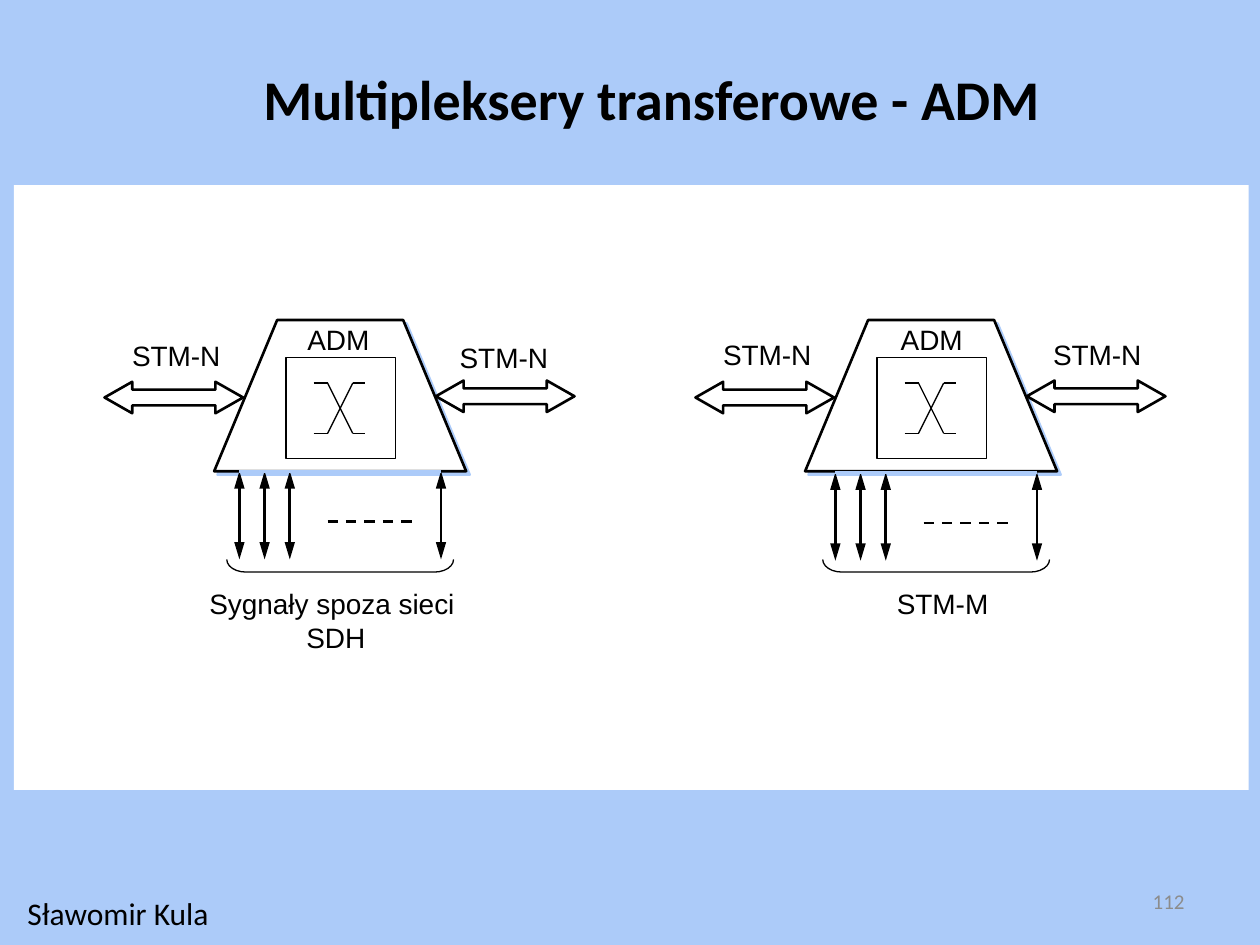
import pptx
import pptx.dml.color
import pptx.enum.dml
import pptx.enum.shapes
import pptx.enum.text
import pptx.oxml
import pptx.oxml.ns
import pptx.util

Inches = pptx.util.Inches
Pt = pptx.util.Pt
SHAPE = pptx.enum.shapes.MSO_SHAPE
ALIGN = pptx.enum.text.PP_ALIGN
ANCHOR = pptx.enum.text.MSO_ANCHOR
BLUE, WHITE, BLACK, GRAY = "ACCBF9", "FFFFFF", "000000", "8C8C8C"


def rgb(value):
    return pptx.dml.color.RGBColor.from_string(value)


def parse_a(xml):
    """Turn one DrawingML element, written with the a: prefix, into a node."""
    head, sep, rest = xml.partition(" ")
    return pptx.oxml.parse_xml(f"{head} {pptx.oxml.ns.nsdecls('a')} {rest}")


class Deck:
    """Holds the drawing style and the current slide."""

    thin, thick = 0.75, 1.5

    def __init__(self, width, height, background):
        self.prs = pptx.Presentation()
        self.prs.slide_width, self.prs.slide_height = Inches(width), Inches(height)
        self.s = self.prs.slides.add_slide(self.prs.slide_layouts[6])
        fill = self.s.background.fill
        fill.solid()
        fill.fore_color.rgb = rgb(background)

    def paint(self, sp, fill, width):
        sp.shadow.inherit = False
        if fill:
            sp.fill.solid()
            sp.fill.fore_color.rgb = rgb(fill)
        else:
            sp.fill.background()
        if width:
            sp.line.color.rgb = rgb(BLACK)
            sp.line.width = Pt(width)
        else:
            sp.line.fill.background()

    def shape(self, kind, x, y, w, h, fill=WHITE, width=0, adj=(), rotation=0):
        sp = self.s.shapes.add_shape(kind, Inches(x), Inches(y), Inches(w), Inches(h))
        for i, value in enumerate(adj):
            sp.adjustments[i] = value
        sp.rotation = rotation
        self.paint(sp, fill, width)

    def polygon(self, points):
        """Draw a closed outline with an offset shadow in the background colour."""
        start, *rest = [(Inches(x), Inches(y)) for x, y in points]
        fb = self.s.shapes.build_freeform(*start)
        fb.add_line_segments(rest, close=True)
        sp = fb.convert_to_shape()
        self.paint(sp, WHITE, self.thick)
        effects = sp.fill._xPr.find(pptx.oxml.ns.qn("a:effectLst"))
        effects.append(parse_a(
            '<a:outerShdw dist="35560" dir="2700000" algn="ctr" rotWithShape="0">'
            f'<a:srgbClr val="{BLUE}"/></a:outerShdw>'))

    def line(self, x1, y1, x2, y2, width=thick, color=BLACK, dashed=False, arrows=False):
        c = self.s.shapes.add_connector(
            pptx.enum.shapes.MSO_CONNECTOR.STRAIGHT,
            Inches(x1), Inches(y1), Inches(x2), Inches(y2))
        c.line.color.rgb = rgb(color)
        c.line.width = Pt(width)
        if dashed:
            c.line.dash_style = pptx.enum.dml.MSO_LINE.DASH
        if arrows:
            for end in ("headEnd", "tailEnd"):
                c.line._get_or_add_ln().append(
                    parse_a(f'<a:{end} type="triangle" w="med" len="lg"/>'))
        c._element.spPr.append(parse_a("<a:effectLst />"))

    def text(self, content, x, y, w, h, size=16, font="Arial", color=BLACK,
             bold=False, align=ALIGN.LEFT, anchor=ANCHOR.TOP, inset=True, wrap=False):
        tf = self.s.shapes.add_textbox(Inches(x), Inches(y), Inches(w), Inches(h)).text_frame
        tf.word_wrap = wrap
        tf.vertical_anchor = anchor
        if not inset:
            tf.margin_left = tf.margin_right = tf.margin_top = tf.margin_bottom = 0
        tf.text = content
        for p in tf.paragraphs:
            p.alignment = align
            for r in p.runs:
                r.font.size, r.font.name, r.font.bold = Pt(size), font, bold
                r.font.color.rgb = rgb(color)

    def multiplexer(self, x):
        """Draw the trapezoid, its cross-connect box and the two side arrows."""
        y = 2.54
        self.polygon([(x, y + 1.2), (x + 0.5, y), (x + 1.5, y), (x + 2, y + 1.2)])
        self.shape(SHAPE.RECTANGLE, x + 0.57, y + 0.3, 0.87, 0.8, width=self.thin)
        x1, x2, x3, x4 = x + 0.79, x + 0.9, x + 1.1, x + 1.2
        top, bottom = y + 0.5, y + 0.9
        for level in (top, bottom):
            self.line(x1, level, x2, level, self.thin)
            self.line(x3, level, x4, level, self.thin)
        self.line(x2, top, x3, bottom, self.thin)
        self.line(x3, top, x2, bottom, self.thin)
        for left, level in ((x - 0.87, 3.03), (x + 1.76, 3.02)):
            self.shape(SHAPE.LEFT_RIGHT_ARROW, left, level, 1.1, 0.25,
                       width=self.thick, adj=(0.5, 0.88))

    def tributaries(self, x, y):
        """Draw the lower arrows, the dashes, the bracket and the upper edge."""
        self.line(x + 0.7, y + 0.4, x + 1.4, y + 0.4, dashed=True)
        for dx in (0, 0.2, 0.4, 1.6):
            self.line(x + dx, y, x + dx, y + 0.7, arrows=True)
        self.shape(SHAPE.LEFT_BRACKET, x + 0.75, 3.59, 0.1, 1.8, fill=None,
                   width=self.thin, adj=(1.52,), rotation=270)
        self.line(x, y, x + 1.6, y, color=BLUE)


def main():
    d = Deck(10, 7.5, BLUE)
    d.shape(SHAPE.RECTANGLE, 0.11, 1.47, 9.8, 4.8)
    d.text("112", 7.17, 6.95, 2.33, 0.4, 12, "Calibri", GRAY,
           align=ALIGN.RIGHT, anchor=ANCHOR.MIDDLE, wrap=True)
    d.text("Multipleksery transferowe - ADM", 2.09, 0.51, 6.22, 0.54, 32, "Calibri",
           bold=True, inset=False)
    for x in (1.7, 6.39):
        d.multiplexer(x)
    for x, y in ((1.9, 3.74), (6.63, 3.75)):
        d.tributaries(x, y)
    for x, y in ((0.95, 2.64), (3.55, 2.65), (5.64, 2.63), (8.26, 2.63)):
        d.text("STM-N", x, y, 0.9, 0.37)
    for x in (2.34, 7.05):
        d.text("ADM", x, 2.51, 0.69, 0.37)
    d.text("Sygnały spoza sieci\n SDH", 1.56, 4.61, 2.15, 0.64, align=ALIGN.CENTER)
    d.text("STM-M", 7.02, 4.61, 0.93, 0.37)
    d.text("Sławomir Kula", 0.12, 7.05, 1.66, 0.4, 18, "Calibri")
    d.prs.save("out.pptx")


if __name__ == "__main__":
    main()
